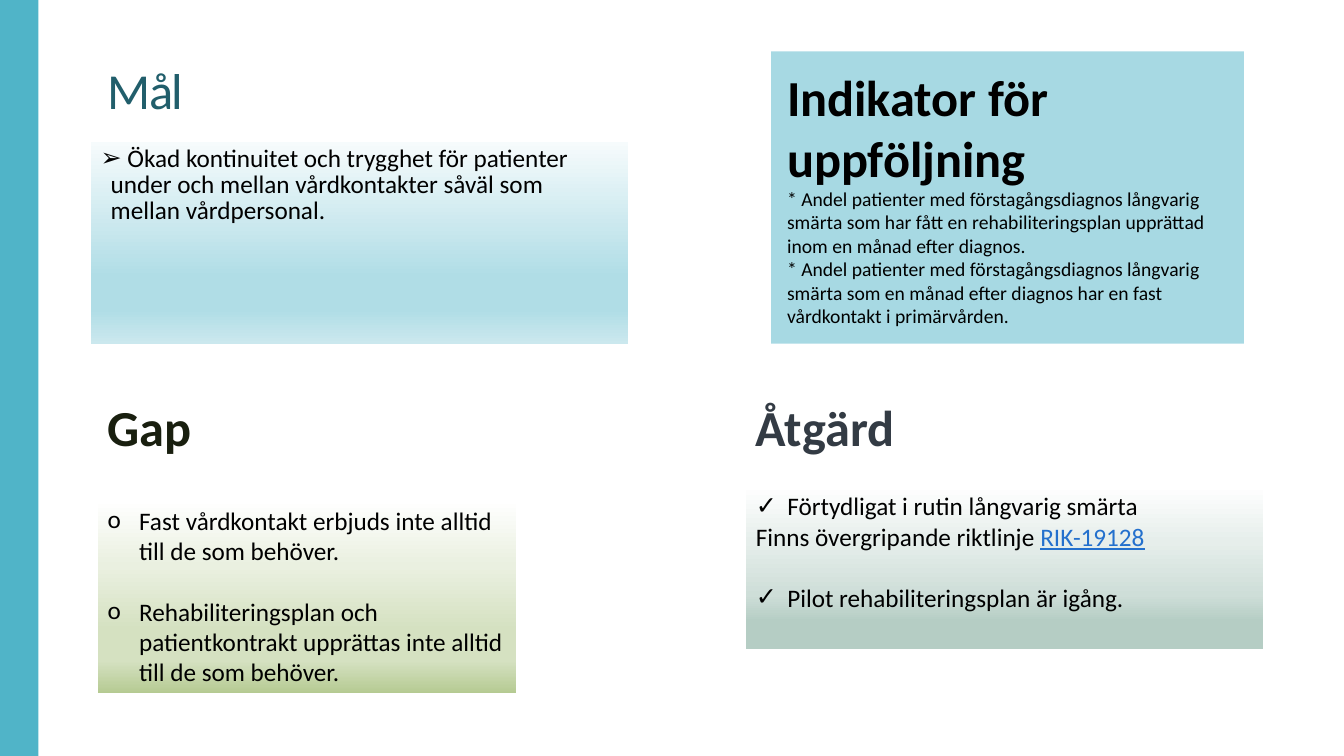
from pptx import Presentation
from pptx.dml.color import RGBColor
from pptx.enum.shapes import MSO_SHAPE as SHAPE
from pptx.enum.text import MSO_ANCHOR as ANCHOR, MSO_AUTO_SIZE as AUTO, PP_ALIGN as ALIGN
from pptx.oxml.ns import qn
from pptx.util import Pt
from lxml.etree import SubElement

FONT = "Calibri"
BLACK = "000000"
TEAL = "50B4C8"
TITLE_SIZE, LIST_SIZE, NOTE_SIZE = 36, 18, 14
LEFT, RIGHT, INDICATOR = 69.8, 532.8, 555.1
LIST_INDENT = 22.5
LINE_GAP = 22

GOAL_STOPS = [(0, "F6FBFC"), (67, "B0DDE6"), (83, "B0DDE6"), (100, "CBE8EE")]
GAP_STOPS = [(0, "FFFFFF"), (34, "EAF0E0"), (67, "D5E1C1"), (83, "D5E1C1"), (100, "B5CA92")]
ACTION_STOPS = [(0, "FFFFFF"), (34, "E6EEEB"), (67, "CEDED8"), (83, "B5CDC4"), (100, "B5CDC4")]


def rgb(value):
    return RGBColor.from_string(value)


def add_run(p, text, size=LIST_SIZE, color=BLACK, bold=False, underline=False, spacing=None):
    r = p.add_run()
    r.text = text
    font = r.font
    font.name, font.size = FONT, Pt(size)
    font.bold, font.underline = bold, underline
    font.color.rgb = rgb(color)
    if spacing is not None:
        r._r.get_or_add_rPr().set("spc", str(round(spacing * 100)))


def add_paragraph(tf, text, bullet=None, indent=0, before=0, line=None, **fmt):
    p = tf.paragraphs[0]
    if p.runs:
        p = tf.add_paragraph()
    p.alignment = ALIGN.LEFT
    p.space_before, p.space_after = Pt(before), Pt(0)
    if line:
        p.line_spacing = line
    if bullet:
        pPr = p._p.get_or_add_pPr()
        pPr.set("marL", str(Pt(indent)))
        pPr.set("indent", str(-Pt(indent)))
        SubElement(pPr, qn("a:buFont")).set("typeface", FONT)
        SubElement(pPr, qn("a:buChar")).set("char", bullet)
    add_run(p, text, **fmt)
    return p


class SlideBuilder:
    def __init__(self, prs):
        self.slide = prs.slides.add_slide(prs.slide_layouts[5])

    def frame(self, sp, anchor):
        tf = sp.text_frame
        tf.word_wrap, tf.auto_size = True, AUTO.NONE
        tf.vertical_anchor = anchor
        return tf

    def title(self, text, x, y, w, h, **fmt):
        sp = self.slide.shapes.title
        sp.left, sp.top, sp.width, sp.height = Pt(x), Pt(y), Pt(w), Pt(h)
        add_paragraph(self.frame(sp, ANCHOR.BOTTOM), text, **fmt)

    def rect(self, x, y, w, h):
        sp = self.slide.shapes.add_shape(SHAPE.RECTANGLE, Pt(x), Pt(y), Pt(w), Pt(h))
        sp.shadow.inherit = False
        sp.line.fill.background()
        return sp

    def solid(self, x, y, w, h, color, opacity=100):
        sp = self.rect(x, y, w, h)
        sp.fill.solid()
        sp.fill.fore_color.rgb = rgb(color)
        if opacity < 100:
            clr = sp._element.spPr.find(qn("a:solidFill"))[0]
            SubElement(clr, qn("a:alpha")).set("val", str(opacity * 1000))

    def gradient(self, x, y, w, h, stops):
        sp = self.rect(x, y, w, h)
        sp.fill.gradient()
        sp.fill.gradient_angle = 270
        gs_list = sp._element.spPr.find(qn("a:gradFill")).find(qn("a:gsLst"))
        for gs in list(gs_list):
            gs_list.remove(gs)
        for pos, color in stops:
            gs = SubElement(gs_list, qn("a:gs"))
            gs.set("pos", str(pos * 1000))
            SubElement(gs, qn("a:srgbClr")).set("val", color)
        return self.frame(sp, ANCHOR.TOP)

    def text(self, x, y, w, h, lines, anchor=ANCHOR.TOP, **fmt):
        sp = self.slide.shapes.add_textbox(Pt(x), Pt(y), Pt(w), Pt(h))
        tf = self.frame(sp, anchor)
        for line in lines:
            add_paragraph(tf, line, **fmt)

    def heading(self, x, y, w, h, lines, color=BLACK):
        self.text(x, y, w, h, lines, ANCHOR.BOTTOM, size=TITLE_SIZE, color=color, bold=True)


def main():
    prs = Presentation()
    prs.slide_width, prs.slide_height = Pt(960), Pt(540)
    s = SlideBuilder(prs)

    s.solid(0, 0, 27.4, 540, TEAL)
    s.solid(550.8, 36.7, 337.7, 208.8, TEAL, opacity=50)

    s.title("Mål", LEFT, -15.1, 373.7, 104.4,
            size=TITLE_SIZE, color="215E6B", spacing=-1.2, line=0.85)
    goal = s.gradient(64.8, 101.5, 383.8, 144, GOAL_STOPS)
    add_paragraph(goal, " Ökad kontinuitet och trygghet för patienter under och mellan "
                  "vårdkontakter såväl som mellan vårdpersonal.",
                  bullet="➢", indent=7.2, line=0.85)

    s.heading(INDICATOR, 18, 324.7, 119.5, ["Indikator för", "uppföljning"])
    s.heading(LEFT, 277.9, 566.6, 51.8, ["Gap"], "191F0F")
    s.heading(RIGHT, 277.9, 157.7, 51.8, ["Åtgärd"], "333B44")

    gap = s.gradient(LEFT, 357.1, 298.8, 138.2, GAP_STOPS)
    add_paragraph(gap, "Fast vårdkontakt erbjuds inte alltid till de som behöver.",
                  bullet="o", indent=LIST_INDENT)
    add_paragraph(gap, "Rehabiliteringsplan och patientkontrakt upprättas inte alltid "
                  "till de som behöver.",
                  bullet="o", indent=LIST_INDENT, before=LINE_GAP)

    action = s.gradient(RIGHT, 347, 369.4, 116.6, ACTION_STOPS)
    add_paragraph(action, "Förtydligat i rutin långvarig smärta",
                  bullet="✓", indent=LIST_INDENT)
    p = add_paragraph(action, "Finns övergripande riktlinje ")
    add_run(p, "RIK-19128", color="2370CD", underline=True)
    add_paragraph(action, "Pilot rehabiliteringsplan är igång.",
                  bullet="✓", indent=LIST_INDENT, before=LINE_GAP)

    s.text(INDICATOR, 129.6, 324.7, 131, [
        "* Andel patienter med förstagångsdiagnos långvarig smärta som har fått en "
        "rehabiliteringsplan upprättad inom en månad efter diagnos.",
        "* Andel patienter med förstagångsdiagnos långvarig smärta som en månad efter "
        "diagnos har en fast vårdkontakt i primärvården.",
    ], size=NOTE_SIZE)

    prs.save("out.pptx")


if __name__ == "__main__":
    main()
